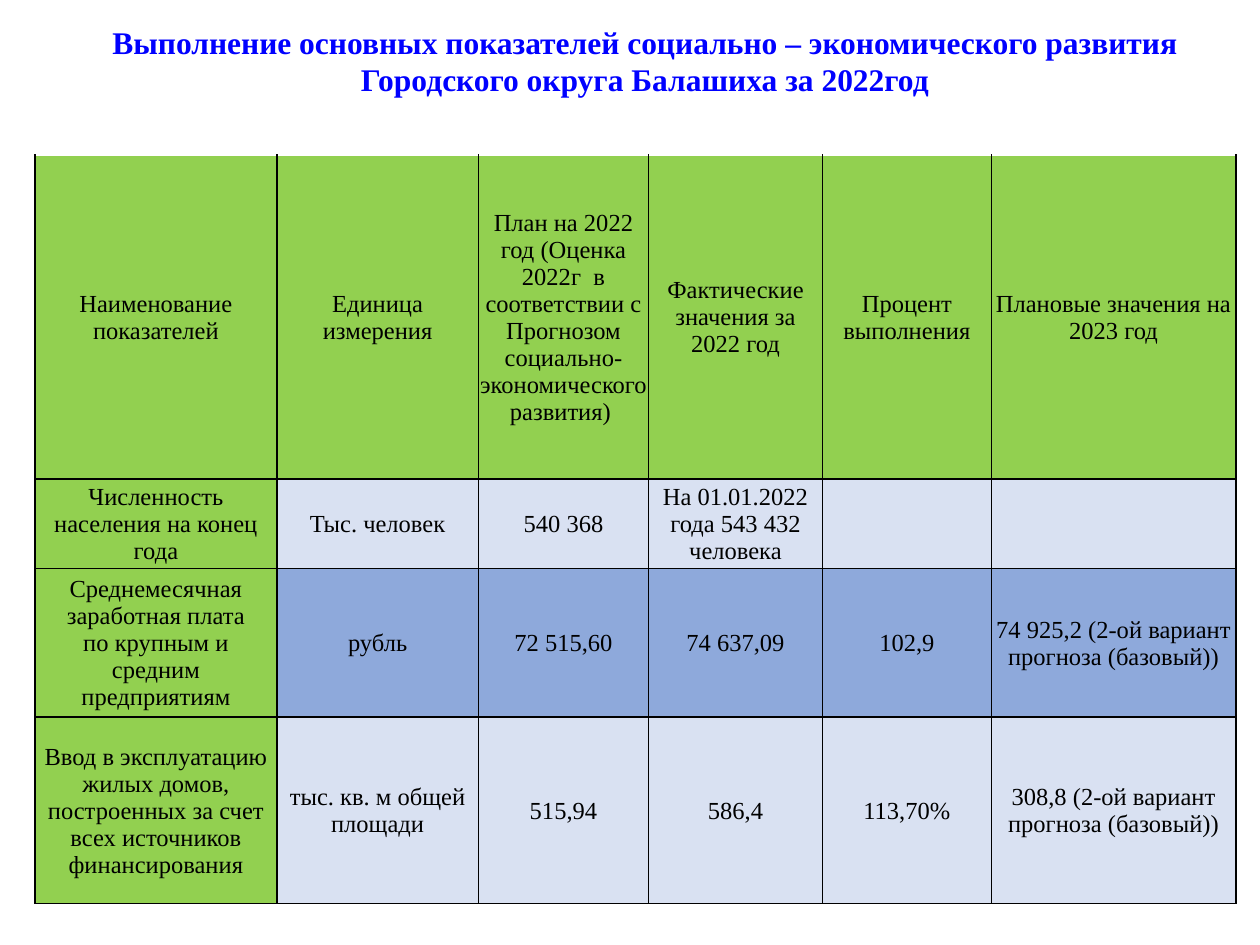
from lxml import etree
from pptx import Presentation
from pptx.dml.color import RGBColor
from pptx.enum.text import MSO_ANCHOR, MSO_AUTO_SIZE, PP_ALIGN
from pptx.oxml.ns import qn
from pptx.util import Pt

CENTER = PP_ALIGN.CENTER
MIDDLE = MSO_ANCHOR.MIDDLE
FIT_SHAPE = MSO_AUTO_SIZE.SHAPE_TO_FIT_TEXT

FONT = "Times New Roman"
BLACK, BLUE = "000000", "0000FF"
GREEN, PALE, MID_BLUE = "92D050", "D9E1F2", "8EA9DB"

TITLE = ("Выполнение основных показателей социально – экономического развития "
         "Городского округа Балашиха за 2022год")
INDICATORS = [
    ["Наименование показателей", "Единица измерения",
     "План на 2022 год (Оценка 2022г  в соответствии с Прогнозом "
     "социально-экономического развития) ",
     "Фактические значения за 2022 год", "Процент выполнения",
     "Плановые значения на 2023 год"],
    ["Численность населения на конец года", "Тыс. человек", "540 368",
     "На 01.01.2022 года 543 432 человека", "", ""],
    ["Среднемесячная заработная плата\nпо крупным и средним предприятиям",
     "рубль", "72 515,60", "74 637,09", "102,9",
     "74 925,2 (2-ой вариант прогноза (базовый))"],
    ["Ввод в эксплуатацию жилых домов, построенных за счет всех источников "
     "финансирования", "тыс. кв. м общей площади", "515,94", "586,4",
     "113,70%", "308,8 (2-ой вариант прогноза (базовый))"],
]
COLUMN_WIDTHS = [138.2, 115.2, 97.2, 99.4, 96.5, 139.7]
ROW_HEIGHTS = [185, 43.2, 85, 106.6]
ROW_FILLS = [GREEN, PALE, MID_BLUE, PALE]


def color(hex_code):
    """Turn a hex string into a colour."""
    return RGBColor.from_string(hex_code)


def write(paragraph, text, size, hex_code, bold=False):
    """Fill a centred paragraph with text in the slide's font."""
    paragraph.text = text
    paragraph.alignment = CENTER
    font = paragraph.font
    font.name, font.size, font.bold = FONT, Pt(size), bold
    font.color.rgb = color(hex_code)


def add_title(slide):
    """Add the slide heading."""
    heading = slide.shapes.add_textbox(Pt(42.5), Pt(9.4), Pt(652.3), Pt(51))
    frame = heading.text_frame
    frame.word_wrap = True
    frame.auto_size = FIT_SHAPE
    write(frame.paragraphs[0], TITLE, 18, BLUE, bold=True)


def add_borders(cell, sides):
    """Draw one-point black lines on the given sides of a cell."""
    properties = cell._tc.get_or_add_tcPr()
    for side in sides:
        line = etree.SubElement(properties, qn(f"a:ln{side}"), w=str(Pt(1)))
        fill = etree.SubElement(line, qn("a:solidFill"))
        etree.SubElement(fill, qn("a:srgbClr"), val=BLACK)


def format_cell(cell, text, hex_fill, sides):
    """Set the text, margins, borders and fill of a cell."""
    cell.margin_left = cell.margin_right = cell.margin_top = Pt(0.72)
    cell.margin_bottom = 0
    cell.vertical_anchor = MIDDLE
    write(cell.text_frame.paragraphs[0], text, 14, BLACK)
    add_borders(cell, sides)
    cell.fill.solid()
    cell.fill.fore_color.rgb = color(hex_fill)


def add_indicator_table(slide):
    """Add the table of planned and actual indicators."""
    table = slide.shapes.add_table(
        len(ROW_HEIGHTS), len(COLUMN_WIDTHS), Pt(20), Pt(88.6),
        Pt(sum(COLUMN_WIDTHS)), Pt(sum(ROW_HEIGHTS))).table
    table.first_row = table.horz_banding = False
    for column, width in zip(table.columns, COLUMN_WIDTHS):
        column.width = Pt(width)
    for r, (values, height) in enumerate(zip(INDICATORS, ROW_HEIGHTS)):
        table.rows[r].height = Pt(height)
        sides = "LRTB" if r else "LRB"
        for c, value in enumerate(values):
            fill = ROW_FILLS[r] if c else GREEN
            format_cell(table.cell(r, c), value, fill, sides)


def main():
    """Build and save the slide."""
    presentation = Presentation()
    presentation.slide_width, presentation.slide_height = Pt(720), Pt(540)
    slide = presentation.slides.add_slide(presentation.slide_layouts[6])
    add_title(slide)
    add_indicator_table(slide)
    presentation.save("out.pptx")


if __name__ == "__main__":
    main()
